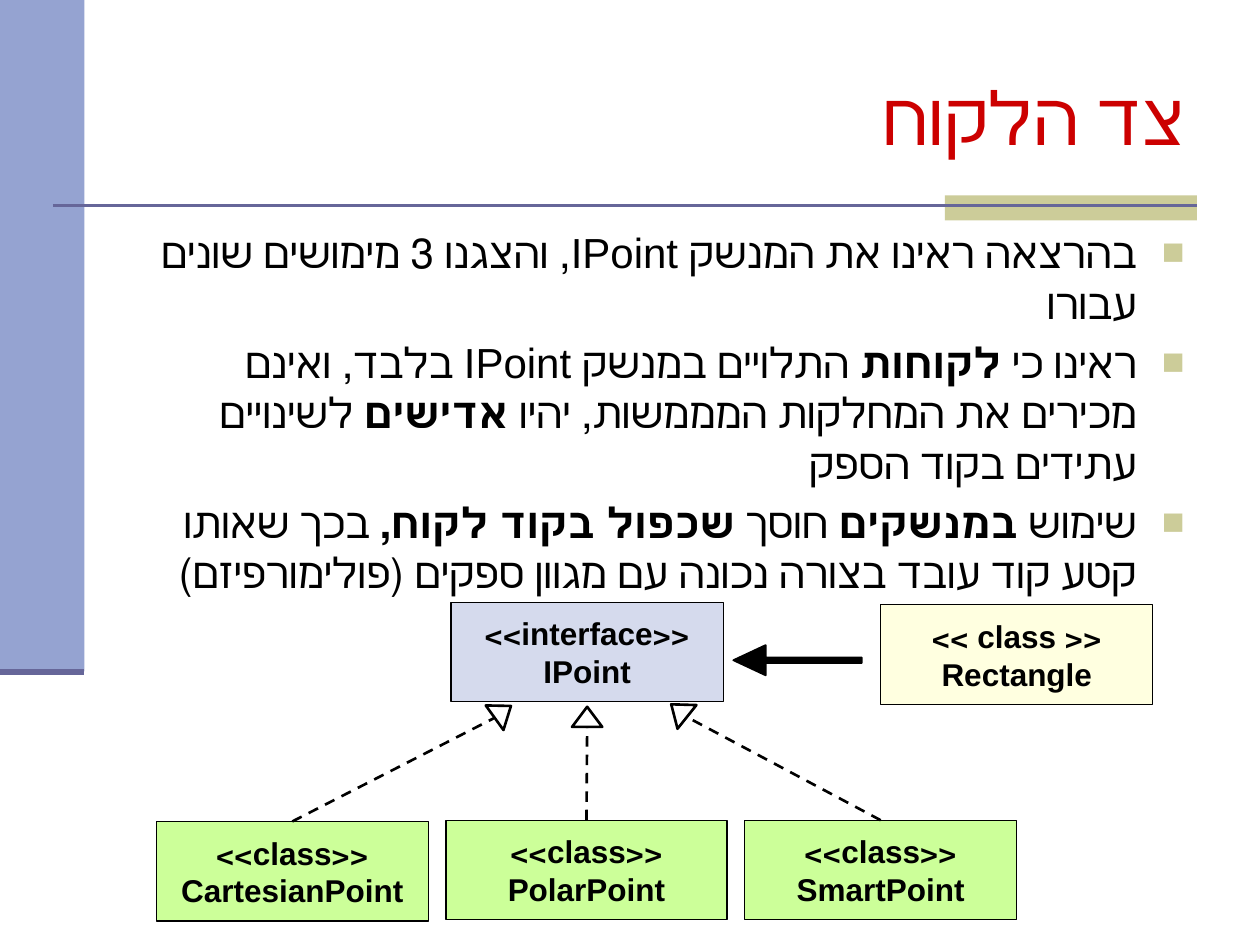
from dataclasses import dataclass

from lxml import etree
from pptx import Presentation
from pptx.dml.color import RGBColor
from pptx.enum.dml import MSO_LINE
from pptx.enum.shapes import MSO_CONNECTOR, MSO_SHAPE
from pptx.enum.text import MSO_ANCHOR, PP_ALIGN
from pptx.oxml.ns import qn
from pptx.util import Emu, Pt

RECT, PROCESS = MSO_SHAPE.RECTANGLE, MSO_SHAPE.FLOWCHART_PROCESS
TRIANGLE, ARROW = MSO_SHAPE.FLOWCHART_EXTRACT, MSO_SHAPE.LEFT_ARROW
STRAIGHT, DASH = MSO_CONNECTOR.STRAIGHT, MSO_LINE.DASH
MIDDLE, CENTER, RIGHT = MSO_ANCHOR.MIDDLE, PP_ALIGN.CENTER, PP_ALIGN.RIGHT
TOP_SIDE = 0

PX = 9144  # EMU per px, 100 px to the inch
COLORS = {
    "band": "95A3D1", "accent": "CCCC99", "rule": "666699", "title": "CC0000",
    "black": "000000", "interface": "D5DAED", "class": "CCFF99", "client": "FFFFE0",
}


@dataclass
class TypeBox:
    x: int
    y: int
    w: int
    stereotype: str
    name: str
    fill: str
    h: int = 79


@dataclass
class Realization:
    """Dashed line from the top of a class box to a hollow triangle."""
    box: TypeBox
    end: tuple[int, int]
    head: tuple[int, int]
    rotation: float


IPOINT = TypeBox(358, 478, 216, "<<interface>>", "IPoint", "interface")
RECTANGLE = TypeBox(699, 480, 216, "<< class >>", "Rectangle", "client")
CARTESIAN = TypeBox(124, 652, 216, "<<class>>", "CartesianPoint", "class")
POLAR = TypeBox(354, 651, 223, "<<class>>", "PolarPoint", "class")
SMART = TypeBox(591, 651, 216, "<<class>>", "SmartPoint", "class")

REALIZATIONS = [
    Realization(CARTESIAN, (392, 570), (387, 557), 54.2),
    Realization(POLAR, (466, 577), (454, 561), 0),
    Realization(SMART, (545, 569), (527, 556), 308.6),
]

# Each bullet is a list of (text, bold) runs
BULLETS = [
    [("בהרצאה ראינו את המנשק IPoint, והצגנו 3 מימושים שונים עבורו", False)],
    [("ראינו כי ", False), ("לקוחות", True),
     (" התלויים במנשק IPoint בלבד, ואינם מכירים את המחלקות המממשות, יהיו ", False),
     ("אדישים", True), (" לשינויים עתידים בקוד הספק", False)],
    [("שימוש ", False), ("במנשקים", True), (" חוסך ", False),
     ("שכפול בקוד לקוח,", True),
     (" בכך שאותו קטע קוד עובד בצורה נכונה עם מגוון ספקים (פולימורפיזם)", False)],
]


def px(n: int) -> Emu:
    return Emu(n * PX)


def rgb(name: str) -> RGBColor:
    return RGBColor.from_string(COLORS[name])


def add_run(p, text: str, size: int, color="black", font="Arial", bold=False):
    r = p.add_run()
    r.text = text
    r.font.size, r.font.name, r.font.bold = Pt(size), font, bold
    r.font.color.rgb = rgb(color)


def set_rtl(p, align):
    p.alignment = align
    p._p.get_or_add_pPr().set("rtl", "1")


def set_bullet(p):
    pPr = p._p.get_or_add_pPr()
    pPr.set("marL", str(px(38)))
    pPr.set("indent", str(-px(38)))
    color = etree.SubElement(pPr, qn("a:buClr"))
    etree.SubElement(color, qn("a:srgbClr")).set("val", COLORS["accent"])
    etree.SubElement(pPr, qn("a:buSzPct")).set("val", "90000")
    etree.SubElement(pPr, qn("a:buFont")).set("typeface", "Arial")
    etree.SubElement(pPr, qn("a:buChar")).set("char", "■")


def add_shape(s, kind, x: int, y: int, w: int, h: int, fill=None, line=0.0):
    sp = s.shapes.add_shape(kind, px(x), px(y), px(w), px(h))
    sp.shadow.inherit = False
    if fill:
        sp.fill.solid()
        sp.fill.fore_color.rgb = rgb(fill)
    else:
        sp.fill.background()
    if line:
        sp.line.color.rgb = rgb("black")
        sp.line.width = Pt(line)
    else:
        sp.line.fill.background()
    return sp


def add_line(s, start: tuple[int, int], end: tuple[int, int], color: str, width: float):
    c = s.shapes.add_connector(STRAIGHT, *map(px, start + end))
    c.line.color.rgb = rgb(color)
    c.line.width = Pt(width)
    etree.SubElement(c._element.spPr, qn("a:effectLst"))
    return c


def add_type_box(s, box: TypeBox):
    sp = add_shape(s, PROCESS, box.x, box.y, box.w, box.h, box.fill, 0.75)
    tf = sp.text_frame
    tf.word_wrap = False
    tf.vertical_anchor = MIDDLE
    for p, text in zip((tf.paragraphs[0], tf.add_paragraph()), (box.stereotype, box.name)):
        set_rtl(p, CENTER)
        add_run(p, text, 18, bold=True)
    return sp


def add_realization(s, link: Realization):
    box = link.box
    sp = add_type_box(s, box)
    c = add_line(s, (box.x + box.w // 2, box.y), link.end, "black", 1.5)
    c.line.dash_style = DASH
    c.begin_connect(sp, TOP_SIDE)
    head = add_shape(s, TRIANGLE, *link.head, 24, 16, line=1.5)
    head.rotation = link.rotation


def add_title(s, text: str):
    sp = s.shapes.title
    sp.left, sp.top, sp.width, sp.height = map(px, (100, 30, 850, 125))
    tf = sp.text_frame
    tf.vertical_anchor = MIDDLE
    p = tf.paragraphs[0]
    set_rtl(p, RIGHT)
    add_run(p, text, 42, "title", "Times New Roman")


def add_bullets(s):
    tf = s.shapes.add_textbox(*map(px, (85, 175, 865, 495))).text_frame
    tf.word_wrap = True
    for i, runs in enumerate(BULLETS):
        p = tf.add_paragraph() if i else tf.paragraphs[0]
        set_rtl(p, RIGHT)
        p.space_before = Pt(5)
        set_bullet(p)
        for text, bold in runs:
            add_run(p, text, 24, bold=bold)


def main():
    prs = Presentation()
    prs.slide_width, prs.slide_height = px(1000), px(750)
    s = prs.slides.add_slide(prs.slide_layouts[5])

    # Side band and title rule
    add_shape(s, RECT, 0, 0, 67, 533, "band")
    add_shape(s, RECT, 750, 155, 200, 20, "accent")
    add_line(s, (42, 163), (950, 163), "rule", 1.5)
    add_line(s, (0, 533), (67, 533), "rule", 3.5)

    # Text
    add_title(s, "צד הלקוח")
    add_bullets(s)

    # Class diagram
    add_type_box(s, IPOINT)
    for link in REALIZATIONS:
        add_realization(s, link)
    add_type_box(s, RECTANGLE)
    arrow = add_shape(s, ARROW, 582, 512, 102, 24, "black", 1)
    arrow.adjustments[0], arrow.adjustments[1] = 0.18, 1.07

    prs.save("out.pptx")


if __name__ == "__main__":
    main()
